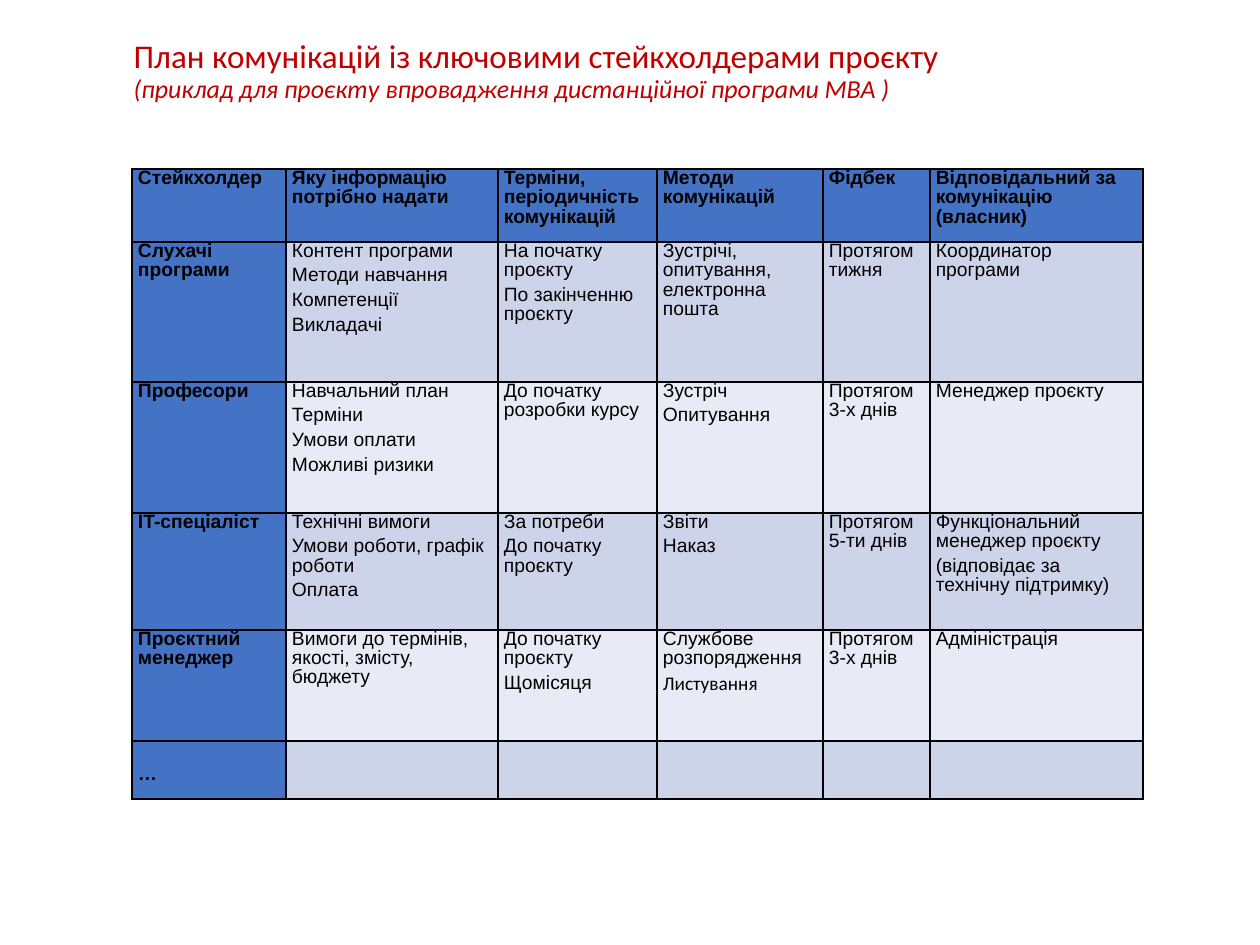
from dataclasses import dataclass

from lxml.etree import SubElement
from pptx import Presentation
from pptx.dml.color import RGBColor
from pptx.enum.text import MSO_ANCHOR, PP_ALIGN
from pptx.oxml.ns import qn
from pptx.util import Emu, Pt


@dataclass(frozen=True)
class Theme:
    title_font: str = "Calibri"
    body_font: str = "Arial"
    title_size: float = 18.9
    subtitle_size: float = 14.8
    body_size: float = 11
    line_spacing: float = 0.9
    para_gap: float = 3
    border: float = 1
    red: str = "C00000"
    black: str = "000000"
    head: str = "4472C4"
    bands: tuple = ("CDD4EA", "E8EBF5")


THEME = Theme()

TITLE = "План комунікацій із ключовими стейкхолдерами проєкту"
SUBTITLE = "(приклад для проєкту впровадження дистанційної програми МВА )"

COL_WIDTHS = (154, 212, 159, 166, 107, 213)
ROW_HEIGHTS = (73, 140, 131, 117, 111, 58)

# One list per table row; a line break starts a new paragraph
ROWS = [
    ["Стейкхолдер", "Яку інформацію потрібно надати",
     "Терміни, періодичність комунікацій", "Методи комунікацій", "Фідбек",
     "Відповідальний за комунікацію (власник)"],
    ["Слухачі програми",
     "Контент програми\nМетоди навчання\nКомпетенції\nВикладачі",
     "На початку проєкту\nПо закінченню проєкту",
     "Зустрічі, опитування, електронна пошта", "Протягом тижня",
     "Координатор програми"],
    ["Професори",
     "Навчальний план\nТерміни\nУмови оплати\nМожливі ризики",
     "До початку розробки курсу", "Зустріч\nОпитування",
     "Протягом 3-х днів", "Менеджер проєкту"],
    ["IT-спеціаліст",
     "Технічні вимоги\nУмови роботи, графік роботи\nОплата",
     "За потреби\nДо початку проєкту", "Звіти\nНаказ",
     "Протягом 5-ти днів",
     "Функціональний менеджер проєкту\n(відповідає за технічну підтримку)"],
    ["Проєктний менеджер", "Вимоги до термінів, якості, змісту, бюджету",
     "До початку проєкту\nЩомісяця", "Службове розпорядження\nЛистування",
     "Протягом 3-х днів", "Адміністрація"],
    ["…", "", "", "", "", ""],
]


def px(n):
    return Emu(round(n * 914400 / 126))


def style_font(font, name, size, color):
    font.name = name
    font.size = Pt(size)
    font.color.rgb = RGBColor.from_string(color)


def set_title(s):
    title = s.shapes.title
    title.left, title.top, title.width, title.height = map(px, (121, 43, 1021, 58))
    tf = title.text_frame
    tf.word_wrap = True
    tf.vertical_anchor = MSO_ANCHOR.MIDDLE
    p = tf.paragraphs[0]
    p.alignment = PP_ALIGN.LEFT
    p.line_spacing = THEME.line_spacing
    r = p.add_run()
    r.text = TITLE
    style_font(r.font, THEME.title_font, THEME.title_size, THEME.red)
    p.add_line_break()
    r = p.add_run()
    r.text = SUBTITLE
    style_font(r.font, THEME.title_font, THEME.subtitle_size, THEME.red)
    r.font.italic = True


def add_borders(cell):
    tcPr = cell._tc.get_or_add_tcPr()
    for side in ("a:lnL", "a:lnR", "a:lnT", "a:lnB"):
        ln = SubElement(tcPr, qn(side), w=str(Pt(THEME.border)))
        fill = SubElement(ln, qn("a:solidFill"))
        SubElement(fill, qn("a:srgbClr"), val=THEME.black)


def fill_cell(cell, text, color, bold):
    add_borders(cell)
    cell.fill.solid()
    cell.fill.fore_color.rgb = RGBColor.from_string(color)
    cell.margin_left = cell.margin_right = px(6)
    cell.margin_top = cell.margin_bottom = 0
    cell.text = text
    for i, p in enumerate(cell.text_frame.paragraphs):
        p.line_spacing = THEME.line_spacing
        p.space_before = Pt(THEME.para_gap if i else 0)
        style_font(p.font, THEME.body_font, THEME.body_size, THEME.black)
        p.font.bold = bold


def add_plan_table(s):
    frame = s.shapes.add_table(len(ROWS), len(COL_WIDTHS), px(132), px(169),
                               px(sum(COL_WIDTHS)), px(sum(ROW_HEIGHTS)))
    table = frame.table
    table.horz_banding = False
    for col, width in zip(table.columns, COL_WIDTHS):
        col.width = px(width)
    for row, height in zip(table.rows, ROW_HEIGHTS):
        row.height = px(height)
    for i, texts in enumerate(ROWS):
        for j, text in enumerate(texts):
            is_head = i == 0 or j == 0
            color = THEME.head if is_head else THEME.bands[(i - 1) % 2]
            fill_cell(table.cell(i, j), text, color, is_head)
    return table


def main():
    prs = Presentation()
    prs.slide_width, prs.slide_height = px(1260), px(945)
    s = prs.slides.add_slide(prs.slide_layouts[5])

    # Heading
    set_title(s)

    # Communication plan
    table = add_plan_table(s)
    table.cell(4, 3).text_frame.paragraphs[1].font.name = THEME.title_font
    table.cell(5, 0).margin_top = px(24)

    prs.save("out.pptx")


if __name__ == "__main__":
    main()
